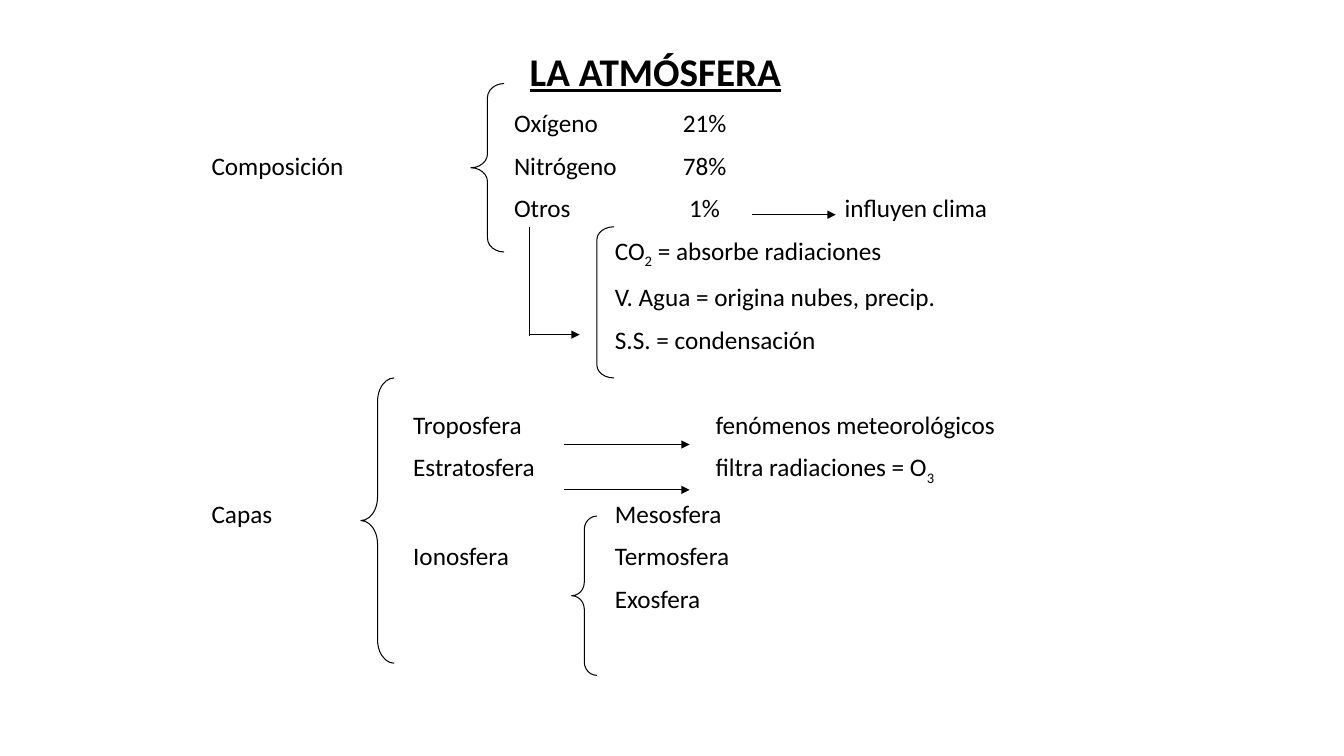
from pptx import Presentation
from pptx.dml.color import RGBColor
from pptx.enum.shapes import MSO_CONNECTOR as CONN, MSO_SHAPE as SHAPE
from pptx.enum.text import MSO_ANCHOR, MSO_AUTO_SIZE, PP_ALIGN
from pptx.oxml.ns import qn
from pptx.util import Inches, Pt
from lxml.etree import SubElement

BLACK = RGBColor(0, 0, 0)
WHITE = RGBColor(255, 255, 255)
FONT = "Calibri"
ROW_GAP, SECTION_GAP = 8.7, 39.3

# Columns: offset from the left text edge, tab alignment
TOPIC, LAYER, GAS, DETAIL = (0, "l"), (2, "l"), (3, "l"), (4, "l")
PERCENT, EFFECT, PHENOMENON = (4.89, "ctr"), (6.28, "l"), (5, "l")

# Content: one row per line, text between bars is subscript
TITLE = "LA ATMÓSFERA"
COMPOSITION = [
    [(GAS, "Oxígeno"), (PERCENT, "21%")],
    [(TOPIC, "Composición"), (GAS, "Nitrógeno"), (PERCENT, "78%")],
    [(GAS, "Otros"), (PERCENT, "1%"), (EFFECT, "influyen clima")],
    [(DETAIL, "CO|2| = absorbe radiaciones")],
    [(DETAIL, "V. Agua = origina nubes, precip.")],
    [(DETAIL, "S.S. = condensación")],
]
LAYERS = [
    [(LAYER, "Troposfera"), (PHENOMENON, "fenómenos meteorológicos")],
    [(LAYER, "Estratosfera"), (PHENOMENON, "filtra radiaciones = O|3|")],
    [(TOPIC, "Capas"), (DETAIL, "Mesosfera")],
    [(LAYER, "Ionosfera"), (DETAIL, "Termosfera")],
    [(DETAIL, "Exosfera")],
]

# Braces: preset, left, top, width, height, corner adjustment
BRACES = [
    (SHAPE.LEFT_BRACKET, 5.92, 2.25, 0.17, 1.5, 0.75),
    (SHAPE.LEFT_BRACE, 4.67, 0.83, 0.33, 1.67, 0.42),
    (SHAPE.LEFT_BRACE, 3.58, 3.75, 0.33, 2.83, 0.71),
    (SHAPE.LEFT_BRACE, 5.67, 5.12, 0.25, 1.58, 0.53),
]
# Lines: x1, y1, x2, y2, arrowhead
LINES = [
    (7.46, 2.13, 8.29, 2.13, True),
    (5.25, 2.25, 5.25, 3.33, False),
    (5.25, 3.32, 5.75, 3.32, True),
    (5.59, 4.41, 6.84, 4.41, True),
    (5.59, 4.86, 6.84, 4.86, True),
]


def set_font(p, size):
    p.font.name = FONT
    p.font.size = Pt(size)
    p.font.color.rgb = BLACK


def fill_row(p, cells, gap):
    p.alignment = PP_ALIGN.LEFT
    p.space_before = Pt(gap)
    tabs = SubElement(p._p.get_or_add_pPr(), qn("a:tabLst"))
    for (offset, align), text in cells:
        if offset:
            SubElement(tabs, qn("a:tab"), pos=str(Inches(offset)), algn=align)
            text = "\t" + text
        for i, part in enumerate(text.split("|")):
            if part:
                r = p.add_run()
                r.text = part
                if i % 2:
                    r._r.get_or_add_rPr().set("baseline", "-25000")
    set_font(p, 18)


prs = Presentation()
prs.slide_width, prs.slide_height = Inches(13.33), Inches(7.5)
s = prs.slides.add_slide(prs.slide_layouts[5])
s.background.fill.solid()
s.background.fill.fore_color.rgb = WHITE

# Title
title = s.shapes.title
title.left, title.top = Inches(2), Inches(0.42)
title.width, title.height = Inches(9), Inches(0.57)
tf = title.text_frame
tf.text = TITLE
tf.auto_size = MSO_AUTO_SIZE.NONE
tf.vertical_anchor = MSO_ANCHOR.TOP
p = tf.paragraphs[0]
p.alignment = PP_ALIGN.CENTER
p.line_spacing = 1.0
set_font(p, 28)
p.font.bold = p.font.underline = True

# Outline text
tf = s.shapes.add_textbox(Inches(2), Inches(1.02), Inches(9), Inches(5.42)).text_frame
tf.word_wrap = True
for n, cells in enumerate(COMPOSITION + LAYERS):
    p = tf.add_paragraph() if n else tf.paragraphs[0]
    gap = SECTION_GAP if n == len(COMPOSITION) else ROW_GAP
    fill_row(p, cells, gap if n else 0)

# Braces and bracket
for preset, left, top, width, height, corner in BRACES:
    sp = s.shapes.add_shape(preset, Inches(left), Inches(top), Inches(width), Inches(height))
    sp.adjustments[0] = corner
    sp.shadow.inherit = False
    sp.fill.background()
    sp.line.color.rgb = BLACK
    sp.line.width = Pt(0.75)

# Lines and arrows
for x1, y1, x2, y2, arrow in LINES:
    line = s.shapes.add_connector(CONN.STRAIGHT, Inches(x1), Inches(y1), Inches(x2), Inches(y2))
    line.line.color.rgb = BLACK
    line.line.width = Pt(0.75)
    if arrow:
        SubElement(line.line._get_or_add_ln(), qn("a:tailEnd"), type="triangle")
    SubElement(line._element.spPr, qn("a:effectLst"))

prs.save("out.pptx")
